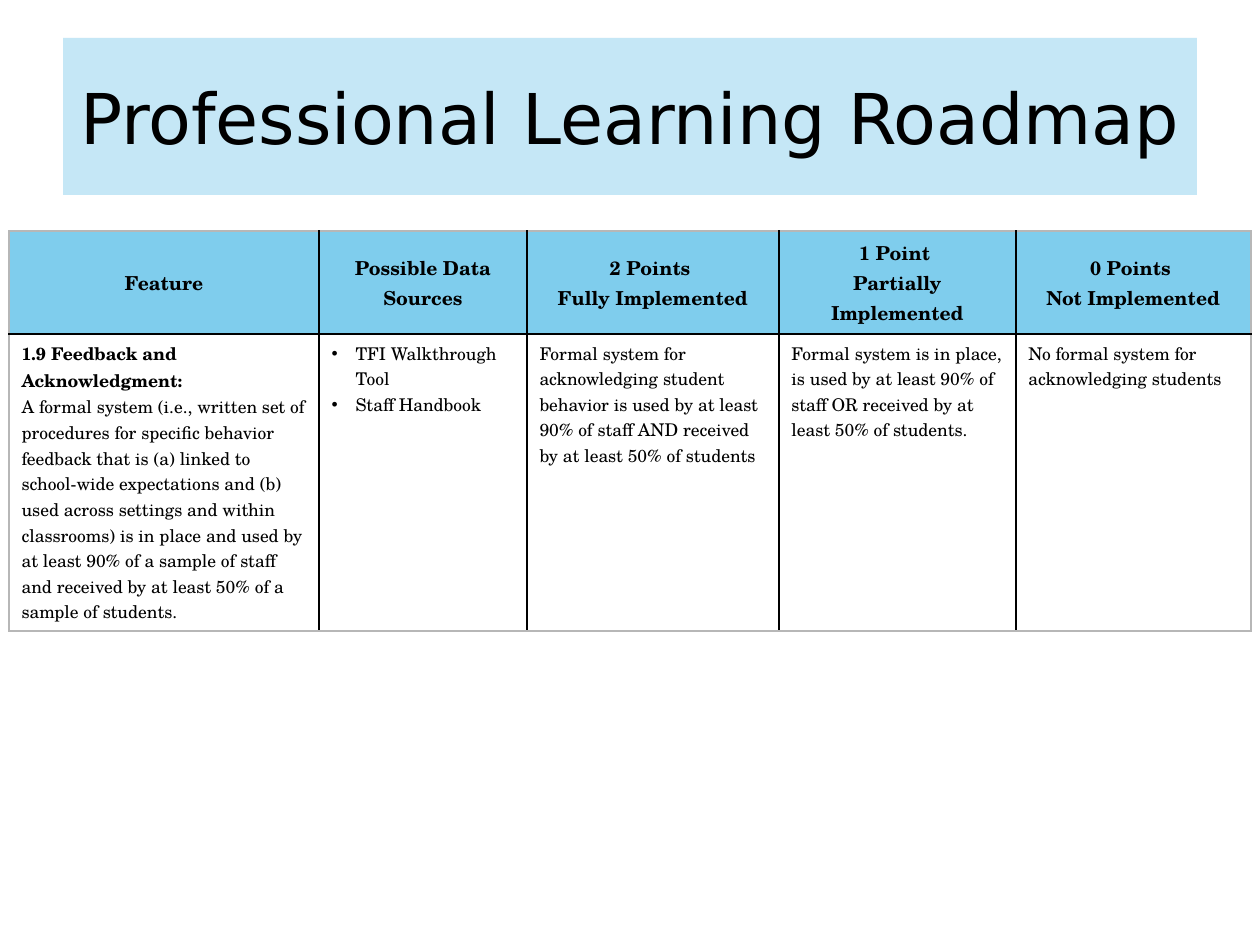
from lxml.etree import SubElement
from pptx import Presentation
from pptx.dml.color import RGBColor
from pptx.enum.text import MSO_ANCHOR, MSO_AUTO_SIZE, PP_ALIGN
from pptx.oxml.ns import qn
from pptx.util import Pt

PX = 914400 // 126
SANS, SERIF = "DejaVu Sans", "TeX Gyre Schola"
BLACK, GRAY, SKY, PALE = "000000", "B7B7B7", "7FCDED", "A9DCF2"
COLS = [310, 208, 252, 237, 235]
ROWS = [103, 297]

HEADS = [
    ["Feature"],
    ["Possible Data Sources"],
    ["2 Points ", "Fully Implemented"],
    ["1 Point ", "Partially Implemented"],
    ["0 Points ", "Not Implemented"],
]
BODY = [
    ["1.9 Feedback and Acknowledgment:",
     "A formal system (i.e., written set of procedures for specific behavior "
     "feedback that is (a) linked to school-wide expectations and (b) used "
     "across settings and within classrooms) is in place and used by at least "
     "90% of a sample of staff and received by at least 50% of a sample of "
     "students."],
    ["TFI Walkthrough Tool", "Staff Handbook"],
    ["Formal system for acknowledging student behavior is used by at least "
     "90% of staff AND received by at least 50% of students"],
    ["Formal system is in place, is used by at least 90% of staff OR received "
     "by at least 50% of students."],
    ["No formal system for acknowledging students"],
]


def px(n):
    return n * PX


def color(code):
    return RGBColor.from_string(code)


def add_run(para, text, font, size, bold=False):
    run = para.add_run()
    run.text = text
    run.font.name = font
    run.font.size = Pt(size)
    run.font.bold = bold
    run.font.color.rgb = color(BLACK)


def add_paras(frame, lines):
    """Yield one paragraph for each line of text."""
    for i, line in enumerate(lines):
        yield (frame.add_paragraph() if i else frame.paragraphs[0]), line


def set_bullet(para):
    props = para._p.get_or_add_pPr()
    props.set("marL", str(px(24)))
    props.set("indent", str(-px(24)))
    tint = SubElement(props, qn("a:buClr"))
    SubElement(tint, qn("a:srgbClr"), val=BLACK)
    SubElement(props, qn("a:buFont"), typeface="Arial")
    SubElement(props, qn("a:buChar"), char="•")


def set_edges(cell, row, col):
    """Gray on the outside of the table, black between cells."""
    outer = {"L": col == 0, "R": col == len(COLS) - 1,
             "T": row == 0, "B": row == len(ROWS) - 1}
    props = cell._tc.get_or_add_tcPr()
    for i, (side, edge) in enumerate(outer.items()):
        line = props.makeelement(qn(f"a:ln{side}"), {"w": str(Pt(1))})
        fill = SubElement(line, qn("a:solidFill"))
        SubElement(fill, qn("a:srgbClr"), val=GRAY if edge else BLACK)
        props.insert(i, line)


def add_title(slide):
    title = slide.shapes.title
    title.left, title.top = px(63), px(38)
    title.width, title.height = px(1134), px(157)
    title.fill.solid()
    title.fill.fore_color.rgb = color(PALE)
    tint = title._element.spPr.find(".//" + qn("a:srgbClr"))
    SubElement(tint, qn("a:alpha"), val="67000")
    frame = title.text_frame
    frame.auto_size = MSO_AUTO_SIZE.NONE
    frame.vertical_anchor = MSO_ANCHOR.MIDDLE
    para = frame.paragraphs[0]
    para.alignment = PP_ALIGN.CENTER
    add_run(para, "Professional Learning Roadmap", SANS, 40)


def fill_head(cell, lines):
    cell.fill.solid()
    cell.fill.fore_color.rgb = color(SKY)
    cell.vertical_anchor = MSO_ANCHOR.MIDDLE
    for para, line in add_paras(cell.text_frame, lines):
        para.alignment = PP_ALIGN.CENTER
        add_run(para, line, SERIF, 11, True)


def fill_body(cell, lines, col):
    cell.fill.background()
    for para, line in add_paras(cell.text_frame, lines):
        if col == 1:
            set_bullet(para)
        add_run(para, line, SERIF, 10, line.endswith(":"))


def add_grid(slide):
    frame = slide.shapes.add_table(len(ROWS), len(COLS), px(9), px(231),
                                   px(sum(COLS)), px(sum(ROWS)))
    table = frame.table
    table.first_row = table.horz_banding = False
    for row, high in zip(table.rows, ROWS):
        row.height = px(high)
    for col, wide in enumerate(COLS):
        table.columns[col].width = px(wide)
        fill_head(table.cell(0, col), HEADS[col])
        fill_body(table.cell(1, col), BODY[col], col)
        for row in range(len(ROWS)):
            set_edges(table.cell(row, col), row, col)


def main():
    deck = Presentation()
    deck.slide_width, deck.slide_height = px(1260), px(945)
    slide = deck.slides.add_slide(deck.slide_layouts[5])
    add_title(slide)
    add_grid(slide)
    deck.save("out.pptx")


if __name__ == "__main__":
    main()
